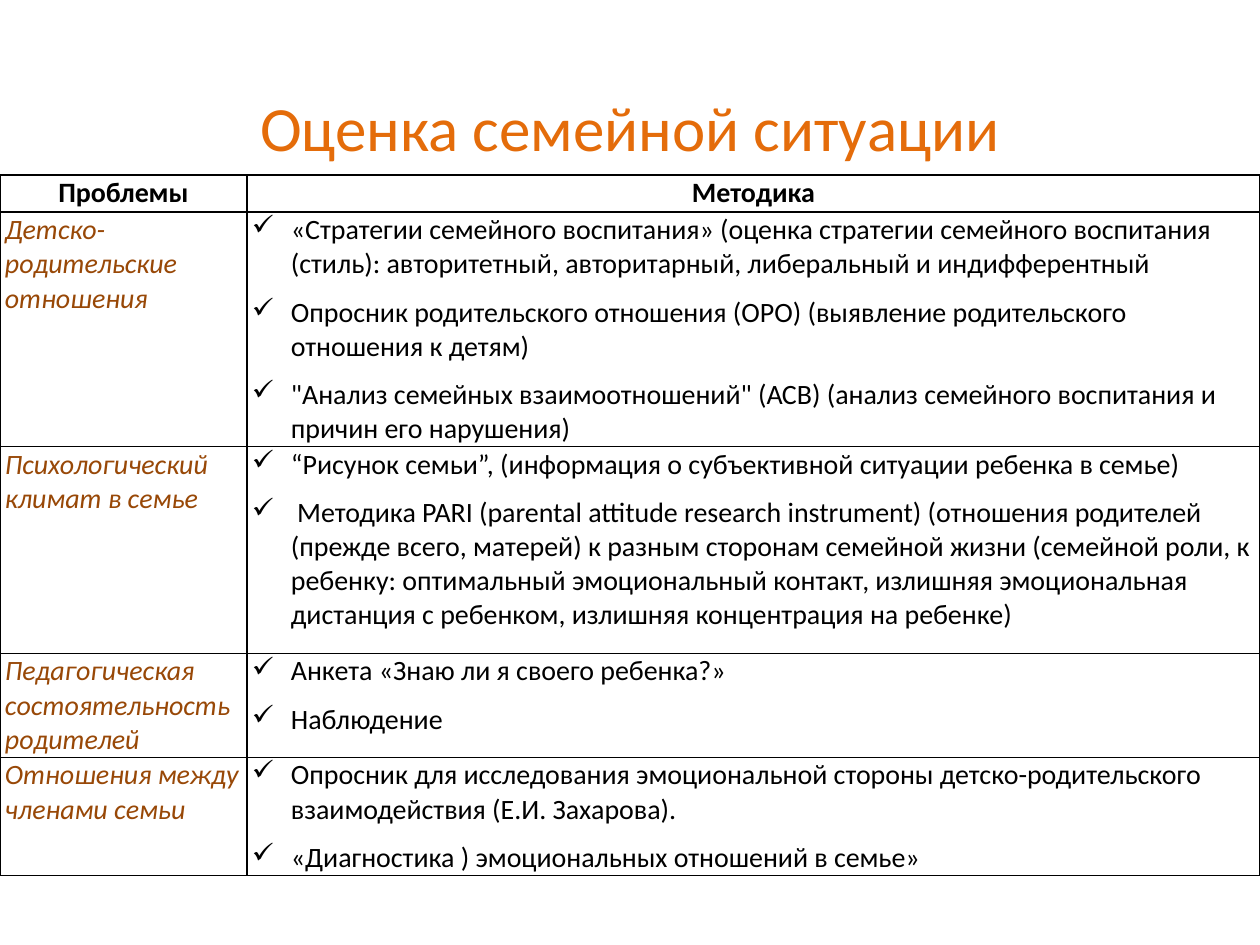
from dataclasses import dataclass

from lxml.etree import SubElement
from pptx import Presentation
from pptx.dml.color import RGBColor
from pptx.enum.text import MSO_ANCHOR as Anchor, PP_ALIGN as Align
from pptx.oxml import parse_xml
from pptx.oxml.ns import nsdecls, qn
from pptx.util import Emu, Pt

PX_PER_INCH = 126


@dataclass(frozen=True)
class Theme:
    font: str = "Calibri"
    title: str = "E46C0A"
    problem: str = "984807"
    ink: str = "000000"
    title_size: int = 36
    body_size: int = 16
    space_after: int = 8
    border: int = 1


@dataclass(frozen=True)
class Topic:
    problem: str
    methods: tuple[str, ...]
    height: int


THEME = Theme()
HEADERS = ("Проблемы", "Методика")
HEADER_HEIGHT = 37
COLUMN_WIDTHS = (247, 1013)
TABLE_TOP = 175
BULLET_INDENT = 39

TOPICS = (
    Topic("Детско-родительские отношения", (
        "«Стратегии семейного воспитания» (оценка стратегии семейного воспитания (стиль): "
        "авторитетный, авторитарный, либеральный и индифферентный",
        "Опросник родительского отношения (ОРО) (выявление родительского отношения к детям)",
        '"Анализ семейных взаимоотношений" (АСВ) (анализ семейного воспитания и причин его нарушения)',
    ), 234),
    Topic("Психологический климат в семье", (
        "“Рисунок семьи”, (информация о субъективной ситуации ребенка в семье)",
        " Методика PARI (parental attitude research instrument) (отношения родителей "
        "(прежде всего, матерей) к разным сторонам семейной жизни (семейной роли, к ребенку: "
        "оптимальный эмоциональный контакт, излишняя эмоциональная дистанция с ребенком, "
        "излишняя концентрация на ребенке)",
    ), 207),
    Topic("Педагогическая состоятельность родителей", (
        "Анкета «Знаю ли я своего ребенка?»",
        "Наблюдение",
    ), 104),
    Topic("Отношения между членами семьи", (
        "Опросник для исследования эмоциональной стороны детско-родительского "
        "взаимодействия (Е.И. Захарова).",
        "«Диагностика ) эмоциональных отношений в семье»",
    ), 118),
)


def px(length: int) -> Emu:
    return Emu(round(length * 914400 / PX_PER_INCH))


def add_span(para, text: str, size: int, color: str, bold=False, italic=False) -> None:
    span = para.add_run()
    span.text = text
    font = span.font
    font.name, font.size = THEME.font, Pt(size)
    font.bold, font.italic = bold, italic
    font.color.rgb = RGBColor.from_string(color)


def add_bullet(para) -> None:
    props = para._p.get_or_add_pPr()
    props.set("marL", str(px(BULLET_INDENT)))
    props.set("indent", str(-px(BULLET_INDENT)))
    SubElement(props, qn("a:buChar")).set("char", "✓")


def style_cell(cell) -> None:
    cell.margin_left = cell.margin_right = px(5)
    cell.margin_top, cell.margin_bottom = px(1), px(0)
    cell.vertical_anchor = Anchor.TOP
    cell.fill.background()
    props = cell._tc.get_or_add_tcPr()
    for index, side in enumerate(("lnL", "lnR", "lnT", "lnB")):
        props.insert(index, parse_xml(
            f'<a:{side} {nsdecls("a")} w="{Pt(THEME.border)}"><a:solidFill>'
            f'<a:srgbClr val="{THEME.ink}"/></a:solidFill></a:{side}>'))


def fill_cell(cell, texts: tuple[str, ...], color: str, align=Align.LEFT,
              bullets=False, bold=False, italic=False) -> None:
    style_cell(cell)
    frame = cell.text_frame
    for index, text in enumerate(texts):
        para = frame.add_paragraph() if index else frame.paragraphs[0]
        if bullets:
            add_bullet(para)
        para.alignment = align
        para.space_after = Pt(THEME.space_after)
        add_span(para, text, THEME.body_size, color, bold, italic)


def add_title(page, text: str) -> None:
    title = page.shapes.title
    title.left, title.top, title.width, title.height = map(px, (63, 76, 1134, 100))
    frame = title.text_frame
    frame.vertical_anchor = Anchor.MIDDLE
    para = frame.paragraphs[0]
    para.alignment = Align.CENTER
    add_span(para, text, THEME.title_size, THEME.title)


def add_methods_table(page) -> None:
    heights = (HEADER_HEIGHT, *(topic.height for topic in TOPICS))
    table = page.shapes.add_table(
        len(heights), len(COLUMN_WIDTHS), px(0), px(TABLE_TOP),
        px(sum(COLUMN_WIDTHS)), px(sum(heights))).table
    table.first_row = table.horz_banding = False
    for column, width in zip(table.columns, COLUMN_WIDTHS):
        column.width = px(width)
    for row, height in zip(table.rows, heights):
        row.height = px(height)

    # Header row
    for index, header in enumerate(HEADERS):
        fill_cell(table.cell(0, index), (header,), THEME.ink, Align.CENTER, bold=True)

    # One row per problem
    for index, topic in enumerate(TOPICS, start=1):
        fill_cell(table.cell(index, 0), (topic.problem,), THEME.problem, italic=True)
        fill_cell(table.cell(index, 1), topic.methods, THEME.ink, bullets=True)


def main() -> None:
    deck = Presentation()
    deck.slide_width, deck.slide_height = px(1260), px(945)
    page = deck.slides.add_slide(deck.slide_layouts[5])
    add_title(page, "Оценка семейной ситуации")
    add_methods_table(page)
    deck.save("out.pptx")


if __name__ == "__main__":
    main()
